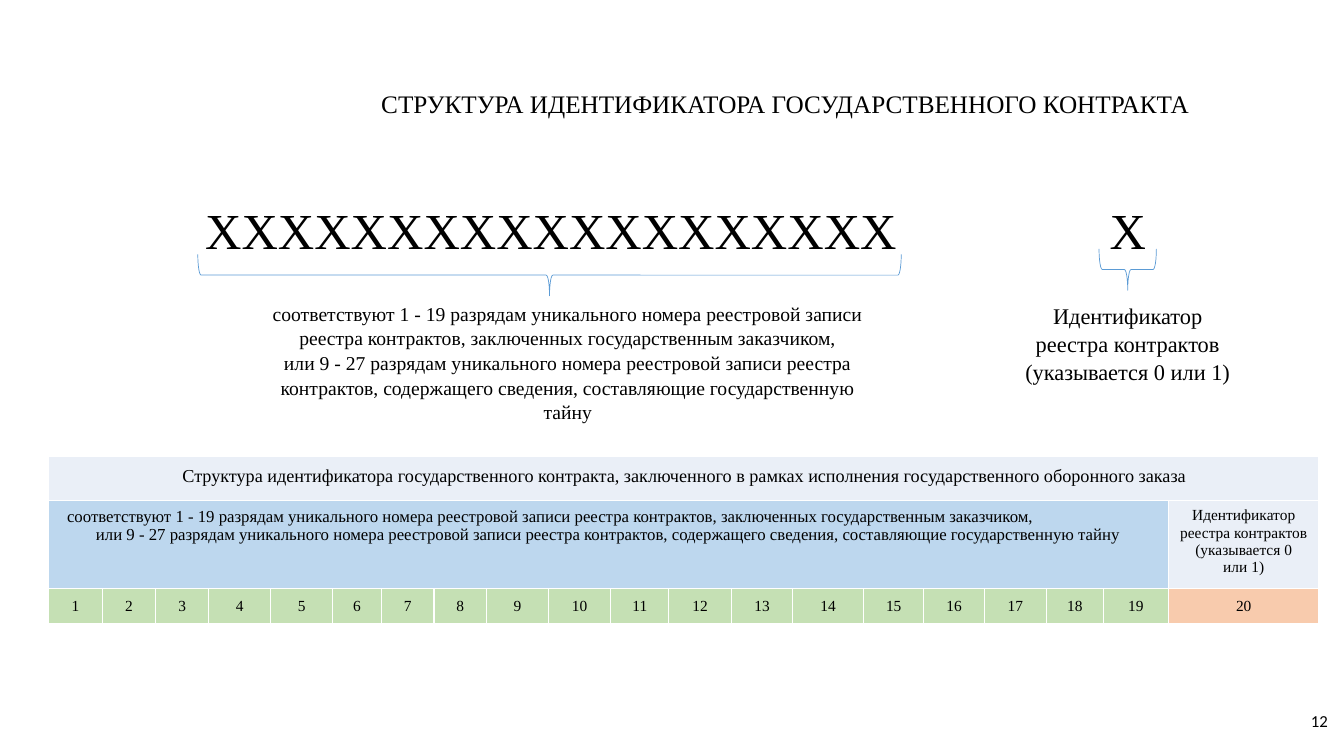
from dataclasses import dataclass

from lxml.etree import SubElement
from pptx import Presentation
from pptx.dml.color import RGBColor
from pptx.enum.shapes import MSO_SHAPE
from pptx.enum.text import MSO_ANCHOR, MSO_AUTO_SIZE, PP_ALIGN
from pptx.oxml.ns import qn
from pptx.util import Pt

SERIF = "Times New Roman"
DIGITS, CONTROL, PALE, REGISTRY = "C5E0B4", "F8CBAD", "EAEFF7", "BDD7EE"
WHITE, BLACK, BRACE_BLUE = "FFFFFF", "000000", "5B9BD5"
COLUMNS = [38.1, 38.1, 38.1, 44.2, 44.2, 35, 37.5, 37.5, 44.2, 44.6,
           41.5, 44.6, 43.9, 50.6, 43.1, 43.1, 44.6, 40.4, 46.8, 107.2]
ROWS = [31, 63, 25]

FIRST_SOURCE = ("соответствуют 1 - 19 разрядам уникального номера реестровой записи "
                "реестра контрактов, заключенных государственным заказчиком,")
SECOND_SOURCE = ("или 9 - 27 разрядам уникального номера реестровой записи реестра "
                 "контрактов, содержащего сведения, составляющие государственную тайну")


@dataclass
class Label:
    text: str
    left: float
    top: float
    width: float
    height: float
    size: float
    align: PP_ALIGN = PP_ALIGN.CENTER
    spacing: float = 1.0
    font: str = SERIF
    anchor: MSO_ANCHOR = MSO_ANCHOR.TOP


@dataclass
class Brace:
    center_x: float
    center_y: float
    span: float
    depth: float = 29.5


def color(value: str) -> RGBColor:
    return RGBColor.from_string(value)


def write(tf, text: str, *, size: float, align=PP_ALIGN.CENTER, spacing: float = 1.0,
          font: str = SERIF, fill: str = BLACK) -> None:
    """Newlines part paragraphs; vertical tabs part lines in a paragraph."""
    for i, block in enumerate(text.split("\n")):
        p = tf.paragraphs[0] if i == 0 else tf.add_paragraph()
        p.alignment = align
        p.line_spacing = spacing
        for j, line in enumerate(block.split("\v")):
            if j:
                p.add_line_break()
            r = p.add_run()
            r.text = line
            r.font.size, r.font.name = Pt(size), font
            r.font.color.rgb = color(fill)


def add_label(slide, label: Label) -> None:
    sp = slide.shapes.add_textbox(Pt(label.left), Pt(label.top), Pt(label.width), Pt(label.height))
    tf = sp.text_frame
    tf.word_wrap = True
    tf.vertical_anchor = label.anchor
    write(tf, label.text, size=label.size, align=label.align, spacing=label.spacing, font=label.font)


def add_brace(slide, brace: Brace) -> None:
    sp = slide.shapes.add_shape(
        MSO_SHAPE.RIGHT_BRACE, Pt(brace.center_x - brace.depth / 2),
        Pt(brace.center_y - brace.span / 2), Pt(brace.depth), Pt(brace.span))
    sp.rotation = 90
    sp.adjustments[0], sp.adjustments[1] = 0.08, 0.5
    sp.shadow.inherit = False
    sp.fill.background()
    sp.line.color.rgb = color(BRACE_BLUE)
    sp.line.width = Pt(0.5)


def style_cell(cell, fill: str) -> None:
    cell.margin_left = cell.margin_right = Pt(4.5)
    cell.margin_top = cell.margin_bottom = Pt(5)
    tc_pr = cell._tc.get_or_add_tcPr()
    for side in ("a:lnL", "a:lnR", "a:lnT", "a:lnB"):
        ln = SubElement(tc_pr, qn(side), w=str(Pt(1)))
        SubElement(SubElement(ln, qn("a:solidFill")), qn("a:srgbClr"), val=WHITE)
    cell.fill.solid()
    cell.fill.fore_color.rgb = color(fill)


def add_structure_table(slide) -> None:
    last = len(COLUMNS) - 1
    table = slide.shapes.add_table(len(ROWS), len(COLUMNS), Pt(34.9), Pt(326.3),
                                   Pt(sum(COLUMNS)), Pt(sum(ROWS))).table
    table.first_row = table.horz_banding = False
    for column, width in zip(table.columns, COLUMNS):
        column.width = Pt(width)
    for row, height in zip(table.rows, ROWS):
        row.height = Pt(height)
    fills = [(PALE, PALE), (REGISTRY, PALE), (DIGITS, CONTROL)]
    for i, (main, end) in enumerate(fills):
        for j in range(len(COLUMNS)):
            style_cell(table.cell(i, j), end if j == last else main)
    table.cell(0, 0).merge(table.cell(0, last))
    table.cell(1, 0).merge(table.cell(1, last - 1))

    write(table.cell(0, 0).text_frame,
          "Структура идентификатора государственного контракта, заключенного "
          "в рамках исполнения государственного оборонного заказа", size=13, spacing=1.15)
    sources = table.cell(1, 0).text_frame
    write(sources, f"{FIRST_SOURCE}\n{SECOND_SOURCE}", size=12)
    # The first source starts near the left edge
    p = sources.paragraphs[0]
    p.alignment = PP_ALIGN.LEFT
    p._p.get_or_add_pPr().set("marL", str(Pt(8.5)))
    write(table.cell(1, last).text_frame,
          "Идентификатор реестра контрактов\n(указывается 0\vили 1)", size=11)
    for j in range(len(COLUMNS)):
        write(table.cell(2, j).text_frame, str(j + 1), size=11, spacing=1.15)


def main() -> None:
    prs = Presentation()
    prs.slide_width, prs.slide_height = Pt(960), Pt(540)
    slide = prs.slides.add_slide(prs.slide_layouts[5])

    # Title
    title = slide.shapes.title
    title.left, title.top, title.width, title.height = Pt(240.5), Pt(36), Pt(641), Pt(78)
    title.text_frame.auto_size = MSO_AUTO_SIZE.NONE
    title.text_frame.vertical_anchor = MSO_ANCHOR.MIDDLE
    write(title.text_frame, "СТРУКТУРА ИДЕНТИФИКАТОРА ГОСУДАРСТВЕННОГО КОНТРАКТА",
          size=18, spacing=0.9)

    # Table of the twenty digits
    add_structure_table(slide)

    # Identifier, explanations and page number
    labels = [
        Label("Х" * 19, 139.5, 138.5, 520, 51, 36, PP_ALIGN.LEFT),
        Label("Х", 785.5, 138.5, 50, 51, 36, PP_ALIGN.LEFT),
        Label(f"{FIRST_SOURCE}\n{SECOND_SOURCE}", 184.5, 211, 442, 92, 14, spacing=1.05),
        Label("Идентификатор\vреестра контрактов\n(указывается 0 или 1)",
              724.5, 211, 162, 65.5, 16, spacing=1.05),
        Label("12", 928.5, 500.5, 27, 29, 12, PP_ALIGN.RIGHT, font="Calibri",
              anchor=MSO_ANCHOR.MIDDLE),
    ]
    for label in labels:
        add_label(slide, label)

    # Braces under the identifier
    for brace in (Brace(392.5, 196.5, 502.5), Brace(805.5, 192.5, 41)):
        add_brace(slide, brace)

    prs.save("out.pptx")


if __name__ == "__main__":
    main()
